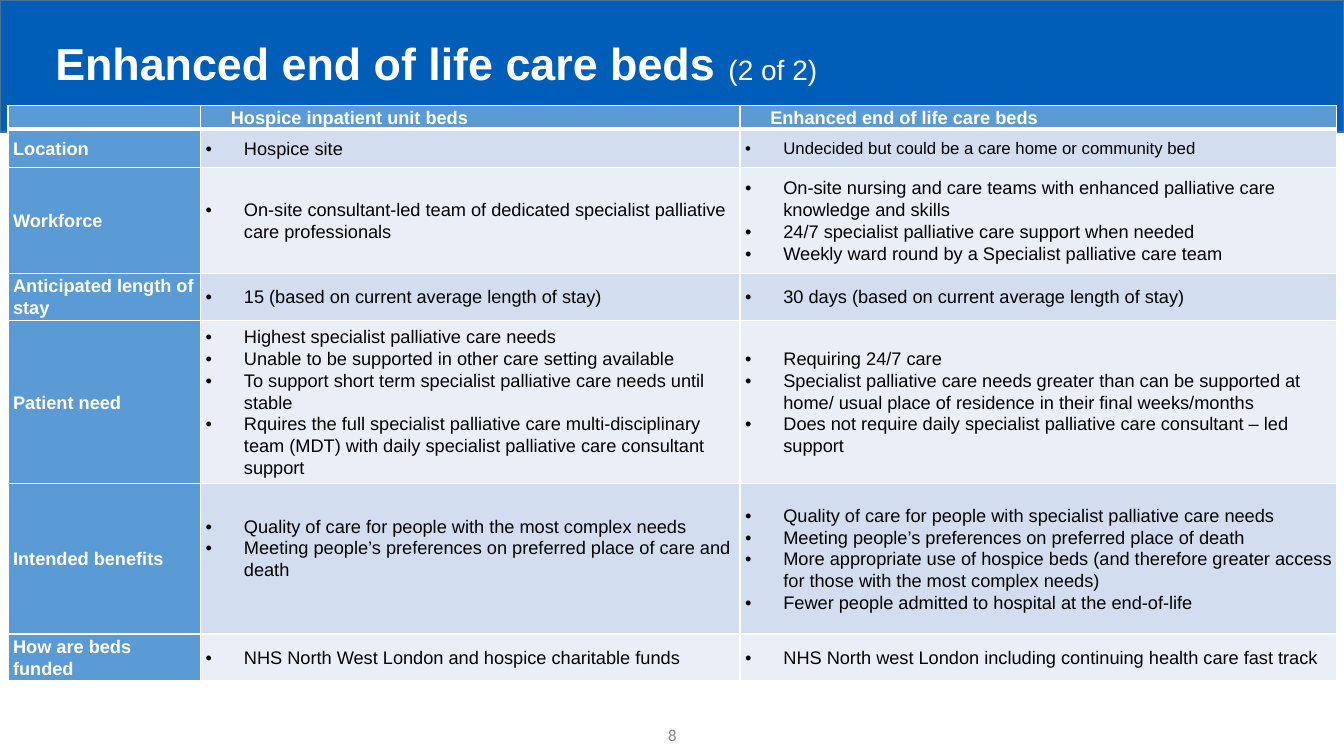
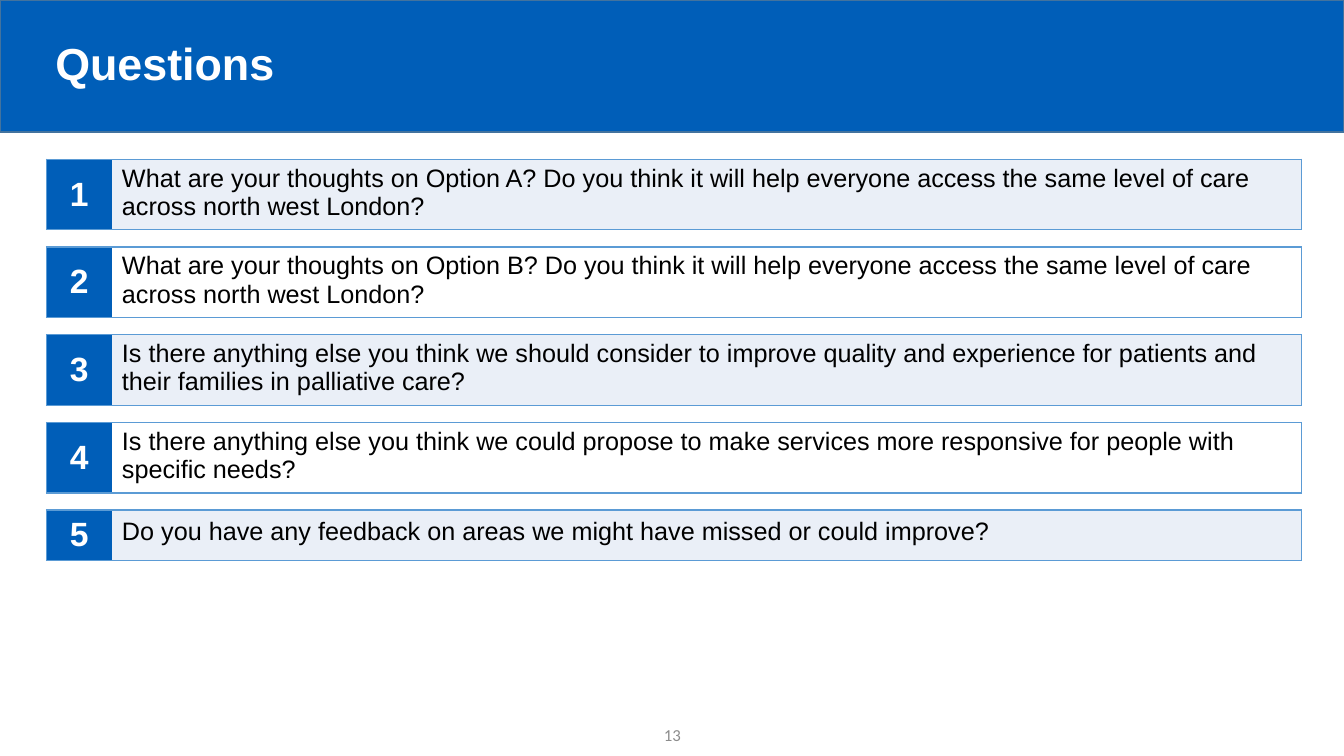
"""Build two slides on enhanced end of life care beds and the questions they raise."""

from dataclasses import dataclass
from typing import Any, NamedTuple

from lxml.etree import SubElement
from pptx import Presentation
from pptx.dml.color import RGBColor
from pptx.enum.shapes import MSO_SHAPE
from pptx.enum.text import MSO_ANCHOR, PP_ALIGN
from pptx.oxml.ns import qn
from pptx.slide import Slide
from pptx.table import Table, _Cell
from pptx.text.text import _Paragraph
from pptx.util import Inches, Pt

COLOURS = {
    "band": "005EB8",
    "band_line": "43739E",
    "header": "5B9BD5",
    "dark_row": "D2DEEF",
    "light_row": "EAEFF7",
    "white": "FFFFFF",
    "black": "000000",
    "grey": "8C8C8C",
}
SIDES = ("left", "right", "top", "bottom")
TITLE_FORMAT = {"name": "Arial", "size": Pt(32), "bold": True}
SUBTITLE_FORMAT = {"name": "Arial", "size": Pt(20), "bold": False}
FOOTER_FORMAT = {"name": "Calibri", "size": Pt(12), "bold": False}
LABEL_FORMAT = {"name": "Arial", "size": Pt(13), "bold": True}
NUMBER_FORMAT = {"name": "Arial", "size": Pt(24), "bold": True}
QUESTION_FORMAT = {"name": "Arial", "size": Pt(18), "bold": False}
COMPARISON_CELL = {
    "vertical_anchor": MSO_ANCHOR.MIDDLE,
    "margin_left": Inches(0.05),
    "margin_right": Inches(0.05),
    "margin_top": Inches(0),
    "margin_bottom": Inches(0),
}
COMPARISON_SPACING = 1.07


@dataclass(frozen=True)
class Bullets:
    lines: tuple[str, ...]
    size: float = 13
    bottom_margin: float = 0


class ComparisonRow(NamedTuple):
    label: str
    height: float
    hospice: Bullets
    enhanced: Bullets


class Question(NamedTuple):
    text: str
    height: float = 0.66
    line_spacing: float = 1.0


COMPARISON_HEADINGS = ("", "Hospice inpatient unit beds", "Enhanced end of life care beds")
COMPARISON_WIDTHS = (1.91, 5.35, 5.92)
HEADING_HEIGHT = 0.22
COMPARISON_ROWS = (
    ComparisonRow(
        "Location", 0.38,
        Bullets(("Hospice site",)),
        Bullets(("Undecided but could be a care home or community bed",), size=12),
    ),
    ComparisonRow(
        "Workforce", 1.05,
        Bullets(("On-site consultant-led team of dedicated specialist palliative care professionals",)),
        Bullets((
            "On-site nursing and care teams with enhanced palliative care knowledge and skills",
            "24/7 specialist palliative care support when needed",
            "Weekly ward round by a Specialist palliative care team",
        )),
    ),
    ComparisonRow(
        "Anticipated length of stay", 0.45,
        Bullets(("15 (based on current average length of stay)",)),
        Bullets(("30 days (based on current average length of stay)",)),
    ),
    ComparisonRow(
        "Patient need", 1.59,
        Bullets((
            "Highest specialist palliative care needs",
            "Unable to be supported in other care setting available",
            "To support short term specialist palliative care needs until stable",
            "Rquires the full specialist palliative care multi-disciplinary team (MDT) "
            "with daily specialist palliative care consultant support",
        )),
        Bullets((
            "Requiring 24/7 care",
            "Specialist palliative care needs greater than can be supported at home/ "
            "usual place of residence in their final weeks/months",
            "Does not require daily specialist palliative care consultant – led support",
        )),
    ),
    ComparisonRow(
        "Intended benefits", 1.49,
        Bullets((
            "Quality of care for people with the most complex needs",
            "Meeting people’s preferences on preferred place of care and death",
        ), bottom_margin=0.22),
        Bullets((
            "Quality of care for people with specialist palliative care needs",
            "Meeting people’s preferences on preferred place of death",
            "More appropriate use of hospice beds (and therefore greater access "
            "for those with the most complex needs)",
            "Fewer people admitted to hospital at the end-of-life",
        )),
    ),
    ComparisonRow(
        "How are beds funded", 0.45,
        Bullets(("NHS North West London and hospice charitable funds",)),
        Bullets(("NHS North west London including continuing health care fast track",)),
    ),
)

QUESTION_LEFT, QUESTION_TOP, QUESTION_GAP = 0.46, 1.58, 0.21
QUESTION_WIDTHS = (0.65, 11.8)
QUESTIONS = (
    Question(
        "What are your thoughts on Option A? Do you think it will help everyone "
        "access the same level of care across north west London?"
    ),
    Question(
        "What are your thoughts on Option B? Do you think it will help everyone "
        "access the same level of care across north west London?"
    ),
    Question(
        "Is there anything else you think we should consider to improve quality "
        "and experience for patients and their families in palliative care?"
    ),
    Question(
        "Is there anything else you think we could propose to make services more "
        "responsive for people with specific needs?"
    ),
    Question(
        "Do you have any feedback on areas we might have missed or could improve?",
        height=0.47, line_spacing=1.1,
    ),
)


def colour(name: str) -> RGBColor:
    return RGBColor.from_string(COLOURS[name])


def apply_format(target: Any, values: dict[str, Any]) -> None:
    for name, value in values.items():
        setattr(target, name, value)


def add_text(paragraph: _Paragraph, text: str, values: dict[str, Any], colour_name: str) -> None:
    run = paragraph.add_run()
    run.text = text
    apply_format(run.font, values)
    run.font.color.rgb = colour(colour_name)


def add_text_box(slide: Slide, left: float, top: float, width: float, height: float) -> _Paragraph:
    shape = slide.shapes.add_textbox(Inches(left), Inches(top), Inches(width), Inches(height))
    apply_format(shape.text_frame, {"word_wrap": True, "vertical_anchor": MSO_ANCHOR.MIDDLE})
    return shape.text_frame.paragraphs[0]


def add_page(presentation: Any, title: str, subtitle: str, number: int) -> Slide:
    slide = presentation.slides.add_slide(presentation.slide_layouts[6])
    band = slide.shapes.add_shape(
        MSO_SHAPE.RECTANGLE, 0, 0, presentation.slide_width, Inches(1.31)
    )
    band.shadow.inherit = False
    band.fill.solid()
    band.fill.fore_color.rgb = colour("band")
    band.line.color.rgb = colour("band_line")
    band.line.width = Pt(1)

    footer = add_text_box(slide, 5.17, 7.09, 3, 0.4)
    footer.alignment = PP_ALIGN.CENTER
    add_text(footer, str(number), FOOTER_FORMAT, "grey")

    heading = add_text_box(slide, 0.45, 0.36, 12.44, 0.59)
    heading.line_spacing = 0.9
    add_text(heading, title, TITLE_FORMAT, "white")
    if subtitle:
        add_text(heading, subtitle, SUBTITLE_FORMAT, "white")
    return slide


def add_plain_table(
    slide: Slide, left: float, top: float, widths: tuple[float, ...], heights: list[float]
) -> Table:
    table = slide.shapes.add_table(
        len(heights), len(widths), Inches(left), Inches(top),
        Inches(sum(widths)), Inches(sum(heights)),
    ).table
    apply_format(table, {"first_row": False, "horz_banding": False})
    for column, width in zip(table.columns, widths):
        column.width = Inches(width)
    for row, height in zip(table.rows, heights):
        row.height = Inches(height)
    return table


def paint_cell(cell: _Cell, fill: str, border: str, widths: dict[str, float]) -> None:
    properties = cell._tc.get_or_add_tcPr()
    for side in SIDES:
        width = widths.get(side, 0)
        line = SubElement(properties, qn(f"a:ln{side[0].upper()}"), w=str(Pt(width)))
        if width:
            solid = SubElement(line, qn("a:solidFill"))
            SubElement(solid, qn("a:srgbClr"), val=COLOURS[border])
        else:
            SubElement(line, qn("a:noFill"))
    cell.fill.solid()
    cell.fill.fore_color.rgb = colour(fill)


def indent(paragraph: _Paragraph, left: float, first: float = 0, bullet: str = "") -> None:
    properties = paragraph._p.get_or_add_pPr()
    properties.set("marL", str(Inches(left)))
    properties.set("indent", str(Inches(first)))
    if bullet:
        SubElement(properties, qn("a:buFont"), typeface="Arial")
        SubElement(properties, qn("a:buChar"), char=bullet)


def write_label(cell: _Cell, text: str, left: float = 0) -> None:
    apply_format(cell, COMPARISON_CELL)
    paragraph = cell.text_frame.paragraphs[0]
    indent(paragraph, left)
    paragraph.line_spacing = COMPARISON_SPACING
    if text:
        add_text(paragraph, text, LABEL_FORMAT, "white")
    else:
        SubElement(paragraph._p, qn("a:endParaRPr"), sz="1300")


def write_bullets(cell: _Cell, bullets: Bullets) -> None:
    apply_format(cell, COMPARISON_CELL | {"margin_bottom": Inches(bullets.bottom_margin)})
    values = {"name": "Arial", "size": Pt(bullets.size), "bold": False}
    for index, line in enumerate(bullets.lines):
        frame = cell.text_frame
        paragraph = frame.add_paragraph() if index else frame.paragraphs[0]
        indent(paragraph, 0.38, -0.38, "•")
        paragraph.line_spacing = COMPARISON_SPACING
        add_text(paragraph, line, values, "black")


def add_comparison(slide: Slide) -> None:
    heights = [HEADING_HEIGHT] + [row.height for row in COMPARISON_ROWS]
    table = add_plain_table(slide, 0.08, 1.05, COMPARISON_WIDTHS, heights)
    thin = dict.fromkeys(SIDES, 1)
    for column, heading in enumerate(COMPARISON_HEADINGS):
        cell = table.cell(0, column)
        paint_cell(cell, "header", "white", thin | {"bottom": 3})
        write_label(cell, heading, 0.25)
    for index, row in enumerate(COMPARISON_ROWS, start=1):
        borders = thin | {"top": 3} if index == 1 else thin
        label_cell = table.cell(index, 0)
        paint_cell(label_cell, "header", "white", borders)
        write_label(label_cell, row.label)
        fill = "dark_row" if index % 2 else "light_row"
        for column, bullets in enumerate((row.hospice, row.enhanced), start=1):
            cell = table.cell(index, column)
            paint_cell(cell, fill, "white", borders)
            write_bullets(cell, bullets)


def add_questions(slide: Slide) -> None:
    top = QUESTION_TOP
    for number, question in enumerate(QUESTIONS, start=1):
        table = add_plain_table(slide, QUESTION_LEFT, top, QUESTION_WIDTHS, [question.height])
        number_cell, text_cell = table.cell(0, 0), table.cell(0, 1)
        paint_cell(number_cell, "band", "header", {"left": 1, "top": 1, "bottom": 1})
        number_cell.vertical_anchor = MSO_ANCHOR.MIDDLE
        paragraph = number_cell.text_frame.paragraphs[0]
        paragraph.alignment = PP_ALIGN.CENTER
        add_text(paragraph, str(number), NUMBER_FORMAT, "white")

        fill = "light_row" if number % 2 else "white"
        paint_cell(text_cell, fill, "header", {"right": 1, "top": 1, "bottom": 1})
        paragraph = text_cell.text_frame.paragraphs[0]
        paragraph.line_spacing = question.line_spacing
        add_text(paragraph, question.text, QUESTION_FORMAT, "black")
        top += question.height + QUESTION_GAP


def main() -> None:
    presentation = Presentation()
    apply_format(presentation, {"slide_width": Inches(13.33), "slide_height": Inches(7.5)})
    add_comparison(add_page(presentation, "Enhanced end of life care beds ", "(2 of 2)", 8))
    add_questions(add_page(presentation, "Questions", "", 13))
    presentation.save("out.pptx")


if __name__ == "__main__":
    main()
